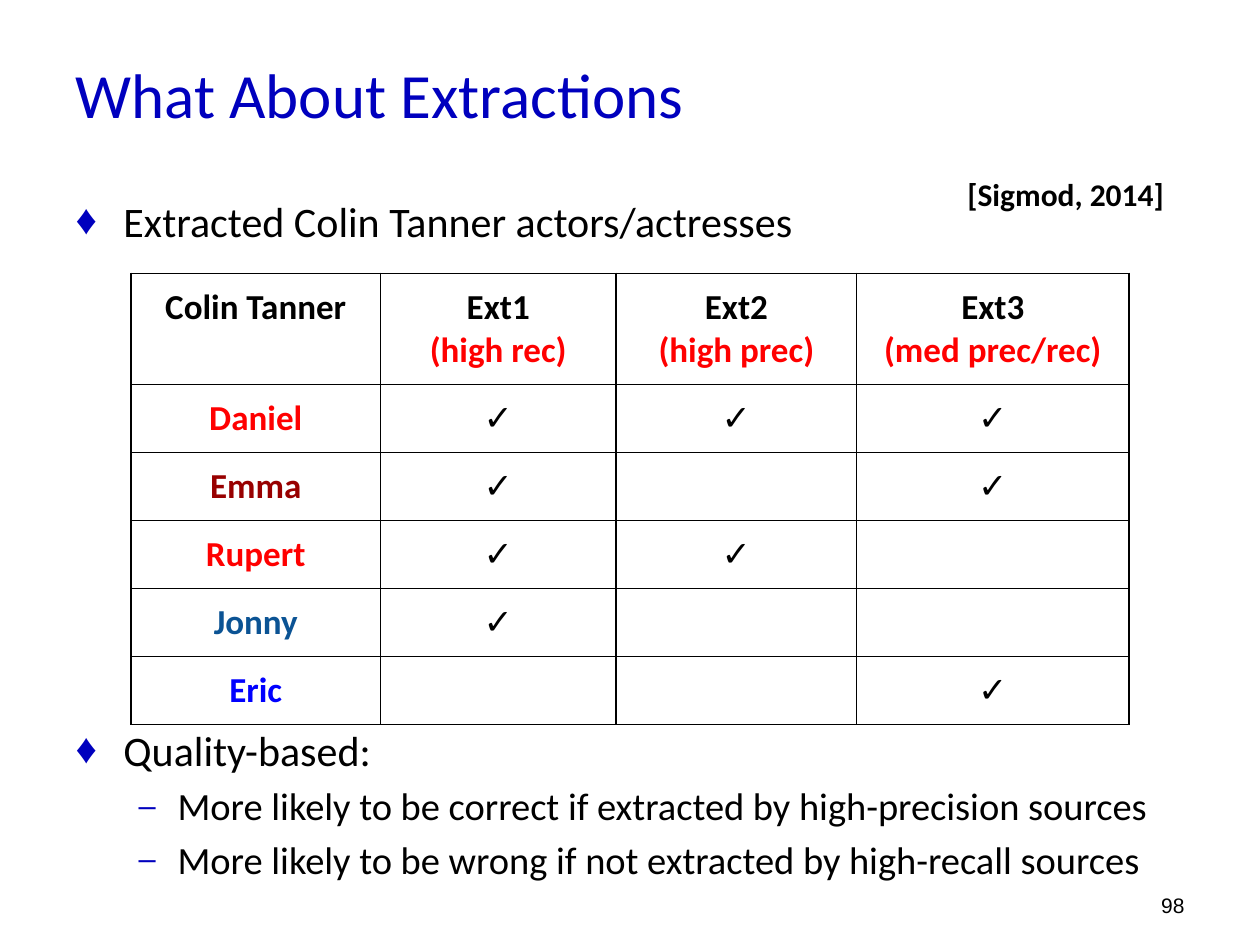
from lxml import etree
from pptx import Presentation
from pptx.dml.color import RGBColor
from pptx.enum import text
from pptx.oxml import ns
from pptx.util import Inches, Pt

BLACK = RGBColor(0, 0, 0)
RED = RGBColor(0xFF, 0, 0)
MAROON = RGBColor(0x98, 0, 0)
STEEL = RGBColor(0x0B, 0x53, 0x94)
BLUE = RGBColor(0, 0, 0xFF)
ACCENT = RGBColor(0, 0, 0xBE)

TITLE = "What About Extractions"
CITATION = "[Sigmod, 2014]"
PAGE = "98"
BULLETS = [
    (0, "Extracted Colin Tanner actors/actresses", 4.8),
    (0, "Quality-based:", 273.5),
    (1, "More likely to be correct if extracted by high-precision sources", 4.4),
    (1, "More likely to be wrong if not extracted by high-recall sources", 4.4),
]
LEVELS = [
    dict(size=24, margin=0.38, hang=0.38, mark="♦", scale=100),
    dict(size=22, margin=0.81, hang=0.31, mark="–", scale=80),
]
HEADINGS = [
    ("Colin Tanner", None),
    ("Ext1", "(high rec)"),
    ("Ext2", "(high prec)"),
    ("Ext3", "(med prec/rec)"),
]
ACTORS = [
    ("Daniel", RED, (1, 2, 3)),
    ("Emma", MAROON, (1, 3)),
    ("Rupert", RED, (1, 2)),
    ("Jonny", STEEL, (1,)),
    ("Eric", BLUE, (3,)),
]
COLUMN_WIDTHS = [1.98, 1.87, 1.91, 2.16]
HEADING_HEIGHT, ACTOR_HEIGHT = 0.88, 0.54


def place(shape, left, top, width, height):
    shape.left, shape.top = Inches(left), Inches(top)
    shape.width, shape.height = Inches(width), Inches(height)


def write(paragraph, words, size, color=BLACK, bold=False,
          align=text.PP_ALIGN.LEFT, face="Calibri"):
    paragraph.text = words
    paragraph.alignment = align
    font = paragraph.font
    font.name, font.size, font.bold = face, Pt(size), bold
    font.color.rgb = color


def add_bullet(paragraph, margin, hang, mark, scale):
    props = paragraph._p.get_or_add_pPr()
    props.set("marL", str(Inches(margin)))
    props.set("indent", str(-Inches(hang)))
    color = etree.SubElement(props, ns.qn("a:buClr"))
    etree.SubElement(color, ns.qn("a:srgbClr"), val=str(ACCENT))
    etree.SubElement(props, ns.qn("a:buSzPct"), val=str(scale * 1000))
    etree.SubElement(props, ns.qn("a:buFont"), typeface="Arial")
    etree.SubElement(props, ns.qn("a:buChar"), char=mark)


def add_borders(cell):
    props = cell._tc.get_or_add_tcPr()
    for index, side in enumerate(("lnL", "lnR", "lnT", "lnB")):
        line = etree.Element(ns.qn(f"a:{side}"), w=str(Pt(1)))
        fill = etree.SubElement(line, ns.qn("a:solidFill"))
        etree.SubElement(fill, ns.qn("a:srgbClr"), val=str(BLACK))
        props.insert(index, line)


def fill_cell(cell, lines):
    cell.margin_left = cell.margin_right = Inches(0.1)
    cell.margin_top = cell.margin_bottom = Inches(0.1)
    cell.fill.background()
    add_borders(cell)
    frame = cell.text_frame
    for index, (words, color) in enumerate(lines or [("", BLACK)]):
        paragraph = frame.add_paragraph() if index else frame.paragraphs[0]
        write(paragraph, words, 20, color, True, text.PP_ALIGN.CENTER)


def add_label(slide, words, box, anchor, **style):
    label = slide.shapes.add_textbox(*map(Inches, box))
    label.text_frame.word_wrap = True
    label.text_frame.vertical_anchor = anchor
    write(label.text_frame.paragraphs[0], words, **style)


def main():
    deck = Presentation()
    deck.slide_width, deck.slide_height = Inches(10), Inches(7.5)
    slide = deck.slides.add_slide(deck.slide_layouts[1])

    title, body = slide.shapes.title, slide.placeholders[1]
    place(title, 0.5, 0.31, 9, 0.86)
    title.text_frame.vertical_anchor = text.MSO_ANCHOR.MIDDLE
    write(title.text_frame.paragraphs[0], TITLE, 36, ACCENT)

    place(body, 0.5, 1.5, 9.5, 5.7)
    body.text_frame.auto_size = text.MSO_AUTO_SIZE.NONE
    for index, (level, words, gap) in enumerate(BULLETS):
        frame = body.text_frame
        paragraph = frame.add_paragraph() if index else frame.paragraphs[0]
        look = dict(LEVELS[level])
        write(paragraph, words, look.pop("size"))
        paragraph.level = level
        paragraph.space_before = Pt(gap)
        add_bullet(paragraph, **look)

    add_label(slide, PAGE, (7.17, 6.83, 2.33, 0.5), text.MSO_ANCHOR.BOTTOM,
              size=12, align=text.PP_ALIGN.RIGHT, face="Arial")
    add_label(slide, CITATION, (7.58, 1.17, 2.3, 0.74), text.MSO_ANCHOR.MIDDLE,
              size=18, bold=True)

    rows = [[[(name, BLACK)] + ([(quality, RED)] if quality else [])
             for name, quality in HEADINGS]]
    for actor, color, extractors in ACTORS:
        rows.append([[(actor, color)]] + [
            [("✓", BLACK)] if column in extractors else []
            for column in range(1, len(HEADINGS))])
    heights = [HEADING_HEIGHT] + [ACTOR_HEIGHT] * len(ACTORS)
    extractions = slide.shapes.add_table(
        len(rows), len(HEADINGS), Inches(1.04), Inches(2.17),
        Inches(sum(COLUMN_WIDTHS)), Inches(sum(heights))).table
    extractions.horz_banding = False
    for column, width in zip(extractions.columns, COLUMN_WIDTHS):
        column.width = Inches(width)
    for row, height, entries in zip(extractions.rows, heights, rows):
        row.height = Inches(height)
        for cell, lines in zip(row.cells, entries):
            fill_cell(cell, lines)

    deck.save("out.pptx")


if __name__ == "__main__":
    main()
